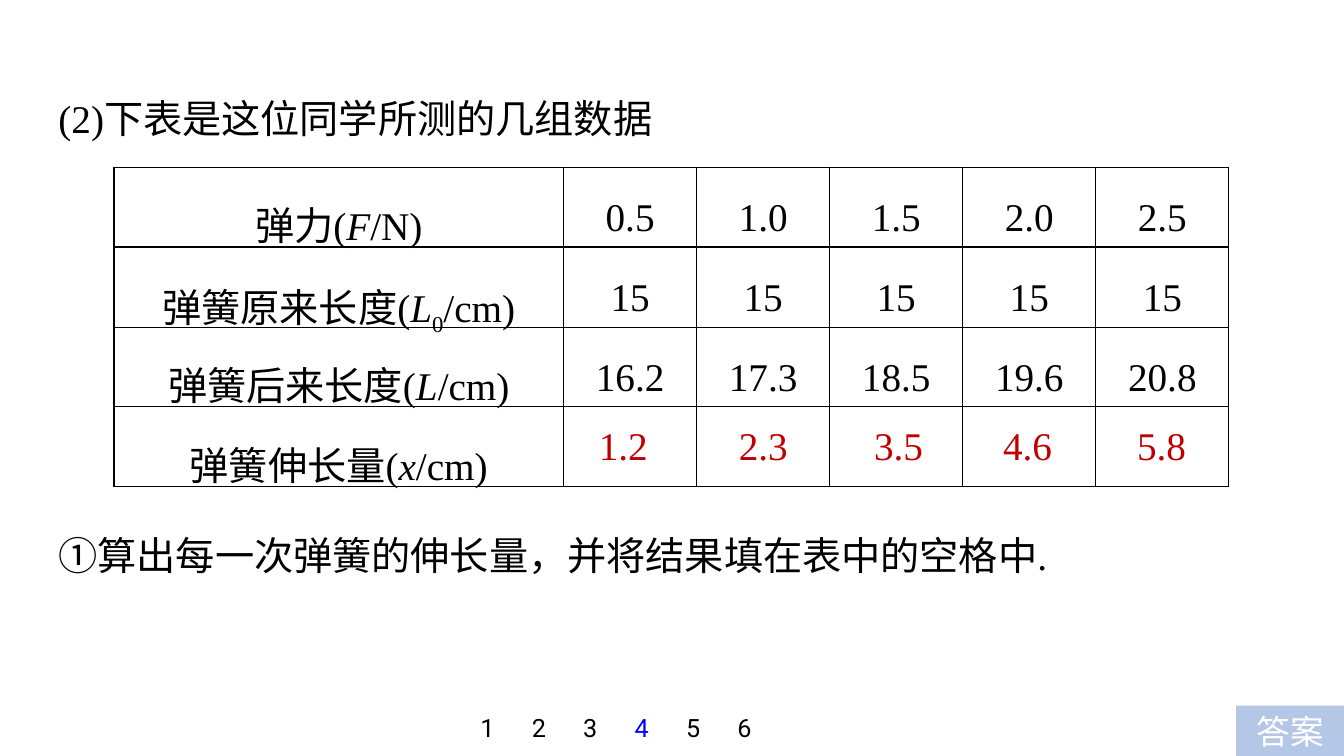
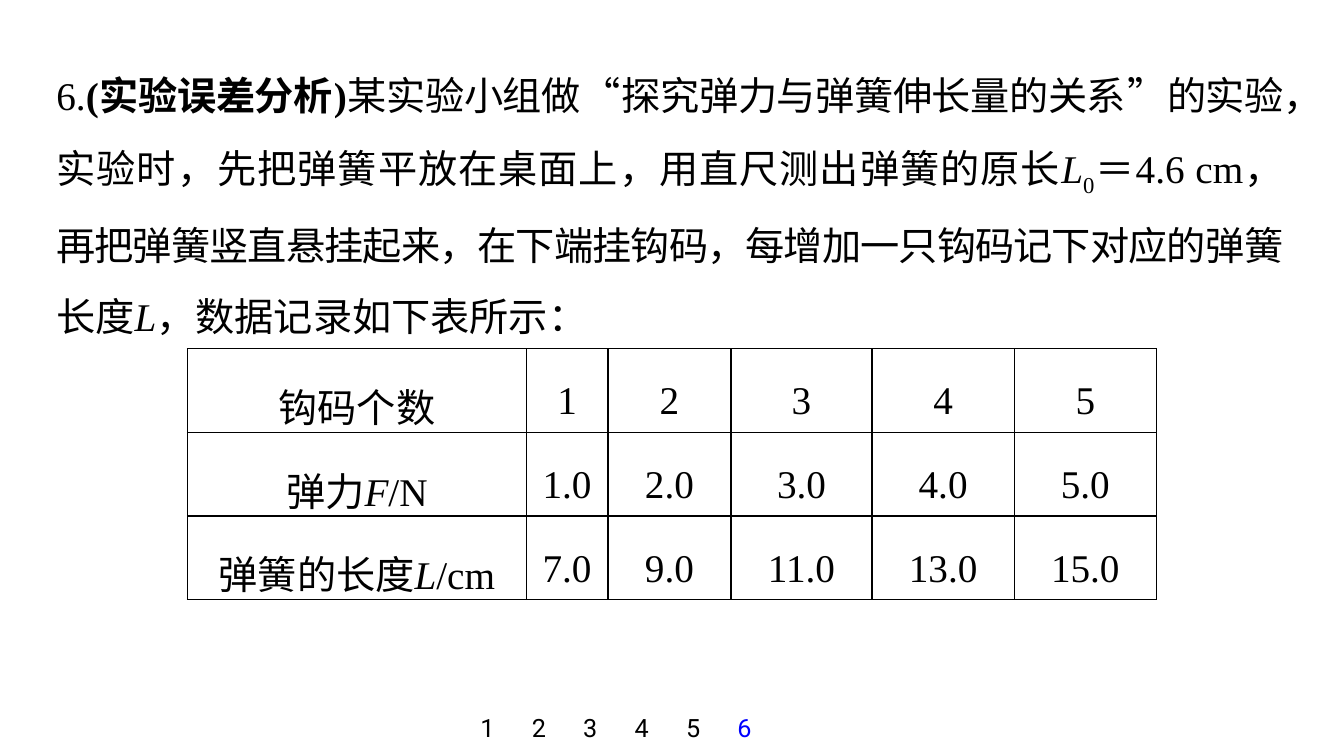
"""Build two physics exercise slides about spring force and extension."""
from lxml import etree
from pptx import Presentation
from pptx.dml.color import RGBColor
from pptx.enum.shapes import MSO_SHAPE
from pptx.enum.text import MSO_ANCHOR, MSO_AUTO_SIZE, PP_ALIGN
from pptx.oxml.ns import qn
from pptx.util import Inches, Pt

RECTANGLE = MSO_SHAPE.RECTANGLE
MIDDLE, TOP = MSO_ANCHOR.MIDDLE, MSO_ANCHOR.TOP
CENTER, JUSTIFY, LEFT = PP_ALIGN.CENTER, PP_ALIGN.JUSTIFY, PP_ALIGN.LEFT
GROW, FIXED = MSO_AUTO_SIZE.SHAPE_TO_FIT_TEXT, MSO_AUTO_SIZE.NONE

COLORS = {"text": "000000", "current": "0000FF", "answer": "C00000",
          "button": "B4C7E7", "light": "FFFFFF"}
SERIF, HAN, DIGITS = "Times New Roman", "Noto Sans CJK SC", "Roboto"
WIDTH, HEIGHT = 13.33, 7.5
WIDE_INSETS, CELL_INSETS, PLAIN_INSETS = (0.13, 0.07), (0.05, 0), (0.1, 0.05)
PAGE_COUNT, PAGE_LEFT, PAGE_STEP = 6, 4.62, 0.51

ITALIC, SUB, TIGHT = {"italic": True}, {"baseline": -25}, {"spacing": -1}
HAN_TIGHT = {"font": HAN, "spacing": -1}

SLIDES = [
    {
        "current": 4,
        "texts": [
            ((0.45, 0.63, 12.36, 0.75), ["(2)下表是这位同学所测的几组数据"]),
            ((0.45, 4.97, 12.36, 0.75),
             [("①", {"font": HAN}), "算出每一次弹簧的伸长量，并将结果填在表中的空格中."]),
        ],
        "table": {
            "at": (1.13, 1.66),
            "columns": [4.46] + [1.32] * 5,
            "row_height": 0.79,
            "rows": [
                (["弹力(", ("F", ITALIC), "/N)"], ["0.5", "1.0", "1.5", "2.0", "2.5"]),
                (["弹簧原来长度(", ("L", ITALIC), ("0", SUB), "/cm)"], ["15"] * 5),
                (["弹簧后来长度(", ("L", ITALIC), "/cm)"],
                 ["16.2", "17.3", "18.5", "19.6", "20.8"]),
                (["弹簧伸长量(", ("x", ITALIC), "/cm)"], [""] * 5),
            ],
        },
        "answers": [(5.84, "1.2"), (7.23, "2.3"), (8.57, "3.5"),
                    (9.85, "4.6"), (11.18, "5.8")],
        "button": "答案",
    },
    {
        "current": 6,
        "texts": [
            ((0.43, 0.4, 12.43, 2.96), [
                "6.", ("(实验误差分析)", {"bold": True, "spacing": -1}),
                ("某实验小组做", TIGHT), ("“", HAN_TIGHT),
                ("探究弹力与弹簧伸长量的关系", TIGHT), ("”", HAN_TIGHT), ("的实验，", TIGHT),
                "实验时，先把弹簧平放在桌面上，用直尺测出弹簧的原长",
                ("L", ITALIC), ("0", SUB), "＝4.6 cm，",
                ("再把弹簧竖直悬挂起来，在下端挂钩码，每增加一只钩码记下对应的弹", TIGHT),
                "簧长度", ("L", ITALIC), "，数据记录如下表所示："]),
        ],
        "table": {
            "at": (1.86, 3.46),
            "columns": [3.36, 0.81, 1.22, 1.4, 1.41, 1.41],
            "row_height": 0.83,
            "rows": [
                (["钩码个数"], ["1", "2", "3", "4", "5"]),
                (["弹力", ("F", ITALIC), "/N"], ["1.0", "2.0", "3.0", "4.0", "5.0"]),
                (["弹簧的长度", ("L", ITALIC), "/cm"],
                 ["7.0", "9.0", "11.0", "13.0", "15.0"]),
            ],
        },
        "answers": [],
        "button": None,
    },
]


def add_span(para, text, size, color, font, bold=False, italic=False, spacing=0, baseline=0):
    span = para.add_run()
    span.text = text
    span.font.size = Pt(size)
    span.font.bold, span.font.italic = bold, italic
    span.font.color.rgb = RGBColor.from_string(COLORS[color])
    span.font.name = font
    properties = span.font._element
    etree.SubElement(properties, qn("a:ea")).set("typeface", HAN)
    if spacing:
        properties.set("spc", str(spacing * 100))
    if baseline:
        properties.set("baseline", str(baseline * 1000))


def write(frame, spans, size=28, color="text", font=SERIF, align=LEFT, line=1.0):
    para = frame.paragraphs[0]
    para.alignment, para.line_spacing = align, line
    for span in spans:
        text, changes = (span, {}) if isinstance(span, str) else span
        if text:
            add_span(para, text, **{"size": size, "color": color, "font": font, **changes})


def set_margins(target, insets):
    target.margin_left = target.margin_right = Inches(insets[0])
    target.margin_top = target.margin_bottom = Inches(insets[1])


def add_text(page, at, spans, insets=PLAIN_INSETS, anchor=TOP, wrap=False, fit=GROW, **style):
    frame = page.shapes.add_textbox(*map(Inches, at)).text_frame
    frame.word_wrap, frame.auto_size, frame.vertical_anchor = wrap, fit, anchor
    set_margins(frame, insets)
    write(frame, spans, **style)


def add_button(page, text):
    width, height = 1.07, 0.5
    box = page.shapes.add_shape(RECTANGLE, *map(
        Inches, (WIDTH - width, HEIGHT - height, width, height)))
    box.shadow.inherit = False
    box.fill.solid()
    box.fill.fore_color.rgb = RGBColor.from_string(COLORS["button"])
    box.line.fill.background()
    frame = box.text_frame
    frame.word_wrap, frame.auto_size, frame.vertical_anchor = True, GROW, TOP
    write(frame, [text], size=24, color="light", font=HAN, align=CENTER)


def add_borders(cell):
    properties = cell._tc.get_or_add_tcPr()
    for position, side in enumerate(("lnL", "lnR", "lnT", "lnB")):
        border = etree.Element(qn("a:" + side), w=str(Pt(1)))
        fill = etree.SubElement(border, qn("a:solidFill"))
        etree.SubElement(fill, qn("a:srgbClr")).set("val", COLORS["text"])
        properties.insert(position, border)


def add_data_table(page, at, columns, row_height, rows):
    size = (sum(columns), row_height * len(rows))
    table = page.shapes.add_table(len(rows), len(columns), *map(Inches, at + size)).table
    table.first_row = table.horz_banding = False
    for column, width in zip(table.columns, columns):
        column.width = Inches(width)
    for row, (label, values) in zip(table.rows, rows):
        row.height = Inches(row_height)
        for cell, spans in zip(row.cells, [label] + [[value] for value in values]):
            cell.fill.background()
            cell.vertical_anchor = MIDDLE
            set_margins(cell, CELL_INSETS)
            add_borders(cell)
            write(cell.text_frame, spans, align=CENTER, line=1.5)


def add_page_numbers(page, current):
    for index in range(PAGE_COUNT):
        number = index + 1
        add_text(page, (PAGE_LEFT + index * PAGE_STEP, 6.9, 0.43, 0.63), [str(number)],
                 insets=WIDE_INSETS, anchor=MIDDLE, fit=FIXED, size=18, font=DIGITS,
                 color="current" if number == current else "text", align=CENTER)


def main():
    deck = Presentation()
    deck.slide_width, deck.slide_height = Inches(WIDTH), Inches(HEIGHT)
    blank = deck.slide_layouts[6]
    for content in SLIDES:
        page = deck.slides.add_slide(blank)
        for at, spans in content["texts"]:
            add_text(page, at, spans, insets=WIDE_INSETS, wrap=True, align=JUSTIFY, line=1.5)
        if content["button"]:
            add_button(page, content["button"])
        add_page_numbers(page, content["current"])
        add_data_table(page, **content["table"])
        for left, answer in content["answers"]:
            add_text(page, (left, 4.13, 0.69, 0.57), [answer], color="answer")
    deck.save("out.pptx")


if __name__ == "__main__":
    main()
